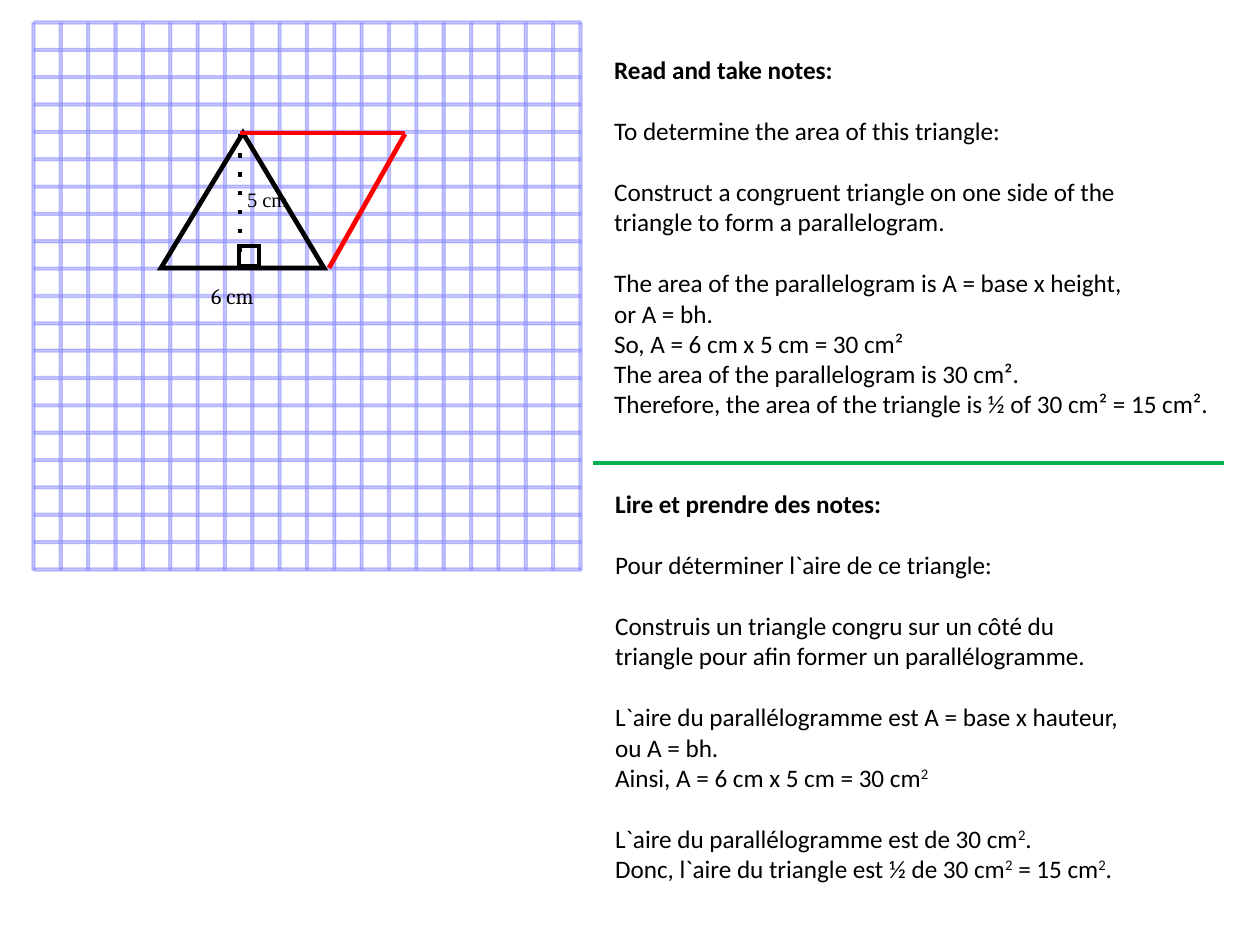
from dataclasses import dataclass

from lxml.etree import SubElement
from pptx import Presentation
from pptx.dml.color import RGBColor
from pptx.enum.shapes import MSO_CONNECTOR, MSO_SHAPE
from pptx.oxml.ns import qn
from pptx.util import Emu, Pt

EMU_PER_PX = 8064


@dataclass(frozen=True)
class Theme:
    ink: RGBColor = RGBColor(0, 0, 0)
    grid: RGBColor = RGBColor(0x8C, 0x8C, 0xFF)
    congruent: RGBColor = RGBColor(0xFF, 0, 0)
    divider: RGBColor = RGBColor(0, 0xB0, 0x50)
    grid_alpha: int = 51
    stroke: Pt = Pt(3)
    lesson_font: str = "Calibri"
    lesson_size: Pt = Pt(16)
    lesson_gap: Pt = Pt(19.5)
    base_font: str = "Cambria"
    base_size: Pt = Pt(14)
    height_font: str = "Times New Roman"
    height_size: Pt = Pt(13)


def px(value):
    return Emu(round(value * EMU_PER_PX))


class Board:
    def __init__(self, slide, theme):
        self.shapes = slide.shapes
        self.theme = theme

    def grid_bar(self, x, y, width, height):
        """Draw one translucent grid line as a thin bar."""
        bar = self.shapes.add_shape(MSO_SHAPE.RECTANGLE, px(x), px(y), px(width), px(height))
        bar.shadow.inherit = False
        bar.line.width = 0
        for paint in (bar.fill, bar.line.fill):
            paint.solid()
            paint.fore_color.rgb = self.theme.grid
        for color in bar._element.spPr.iter(qn("a:srgbClr")):
            SubElement(color, qn("a:alpha"), val=str(self.theme.grid_alpha * 1000))

    def outline(self, points):
        """Draw a closed, unfilled figure with sharp corners."""
        start, *rest = [(px(x), px(y)) for x, y in points]
        builder = self.shapes.build_freeform(*start)
        builder.add_line_segments(rest, close=True)
        figure = builder.convert_to_shape()
        figure.shadow.inherit = False
        figure.fill.background()
        figure.line.color.rgb = self.theme.ink
        figure.line.width = self.theme.stroke
        SubElement(figure.line._get_or_add_ln(), qn("a:miter"), lim="800000")

    def line(self, start, end, color, dash=None):
        ends = [px(value) for value in (*start, *end)]
        segment = self.shapes.add_connector(MSO_CONNECTOR.STRAIGHT, *ends)
        segment.line.color.rgb = color
        segment.line.width = self.theme.stroke
        if dash:
            SubElement(segment.line._get_or_add_ln(), qn("a:prstDash"), val=dash)
        SubElement(segment._element.spPr, qn("a:effectLst"))

    def text(self, box, blocks, font, size, bold_heading=False):
        """Write blocks of lines with a gap between blocks; ^2 marks a raised 2."""
        frame = self.shapes.add_textbox(*map(px, box)).text_frame
        frame.word_wrap = True
        paragraph = frame.paragraphs[0]
        for block_index, block in enumerate(blocks):
            for line_index, words in enumerate(block):
                if block_index or line_index:
                    paragraph = frame.add_paragraph()
                if block_index and not line_index:
                    paragraph.space_before = self.theme.lesson_gap
                paragraph.font.name = font
                paragraph.font.size = size
                paragraph.font.color.rgb = self.theme.ink
                paragraph.font.bold = bold_heading and block_index == 0
                self.add_runs(paragraph, words)

    def add_runs(self, paragraph, words):
        for index, part in enumerate(words.split("^2")):
            if index:
                exponent = paragraph.add_run()
                exponent.text = "2"
                exponent._r.get_or_add_rPr().set("baseline", "30000")
            if part:
                paragraph.add_run().text = part

    def lesson(self, box, blocks):
        self.text(box, blocks, self.theme.lesson_font, self.theme.lesson_size, bold_heading=True)


ENGLISH_LESSON = [
    ["Read and take notes:"],
    ["To determine the area of this triangle:"],
    ["Construct a congruent triangle on one side of the",
     "triangle to form a parallelogram."],
    ["The area of the parallelogram is A = base x height,",
     "or A = bh.",
     "So, A = 6 cm x 5 cm = 30 cm²",
     "The area of the parallelogram is 30 cm².",
     "Therefore, the area of the triangle is ½ of 30 cm² = 15 cm²."],
]
FRENCH_LESSON = [
    ["Lire et prendre des notes:"],
    ["Pour déterminer l`aire de ce triangle:"],
    ["Construis un triangle congru sur un côté du",
     "triangle pour afin former un parallélogramme."],
    ["L`aire du parallélogramme est A = base x hauteur,",
     "ou A = bh.",
     "Ainsi, A = 6 cm x 5 cm = 30 cm^2"],
    ["L`aire du parallélogramme est de 30 cm^2.",
     "Donc, l`aire du triangle est ½ de 30 cm^2 = 15 cm^2."],
]
GRID_LEFT, GRID_TOP, GRID_SIZE, GRID_CELLS, BAR = 32, 22, 547, 20, 3


def main():
    presentation = Presentation()
    presentation.slide_width, presentation.slide_height = px(1260), px(945)
    theme = Theme()
    board = Board(presentation.slides.add_slide(presentation.slide_layouts[6]), theme)

    for index in range(GRID_CELLS + 1):
        offset = index * GRID_SIZE / GRID_CELLS
        board.grid_bar(GRID_LEFT + offset, GRID_TOP + 1, BAR, GRID_SIZE)
        board.grid_bar(GRID_LEFT + 2, GRID_TOP + offset - 1, GRID_SIZE, BAR)

    board.outline([(324, 268), (161, 268), (243, 133)])
    board.line((240, 134), (240, 266), theme.ink, dash="dot")
    board.outline([(239, 246), (259, 246), (259, 266), (239, 266)])
    board.text((200, 277, 122, 39), [["6 cm"]], theme.base_font, theme.base_size)
    board.text((236, 181, 120, 36), [["5 cm"]], theme.height_font, theme.height_size)
    board.lesson((603, 49, 627, 378), ENGLISH_LESSON)
    board.line((240, 133), (405, 133), theme.congruent)
    board.line((405, 134), (329, 268), theme.congruent)
    board.line((593, 463), (1224, 463), theme.divider)
    board.lesson((604, 483, 630, 408), FRENCH_LESSON)
    presentation.save("out.pptx")


if __name__ == "__main__":
    main()
